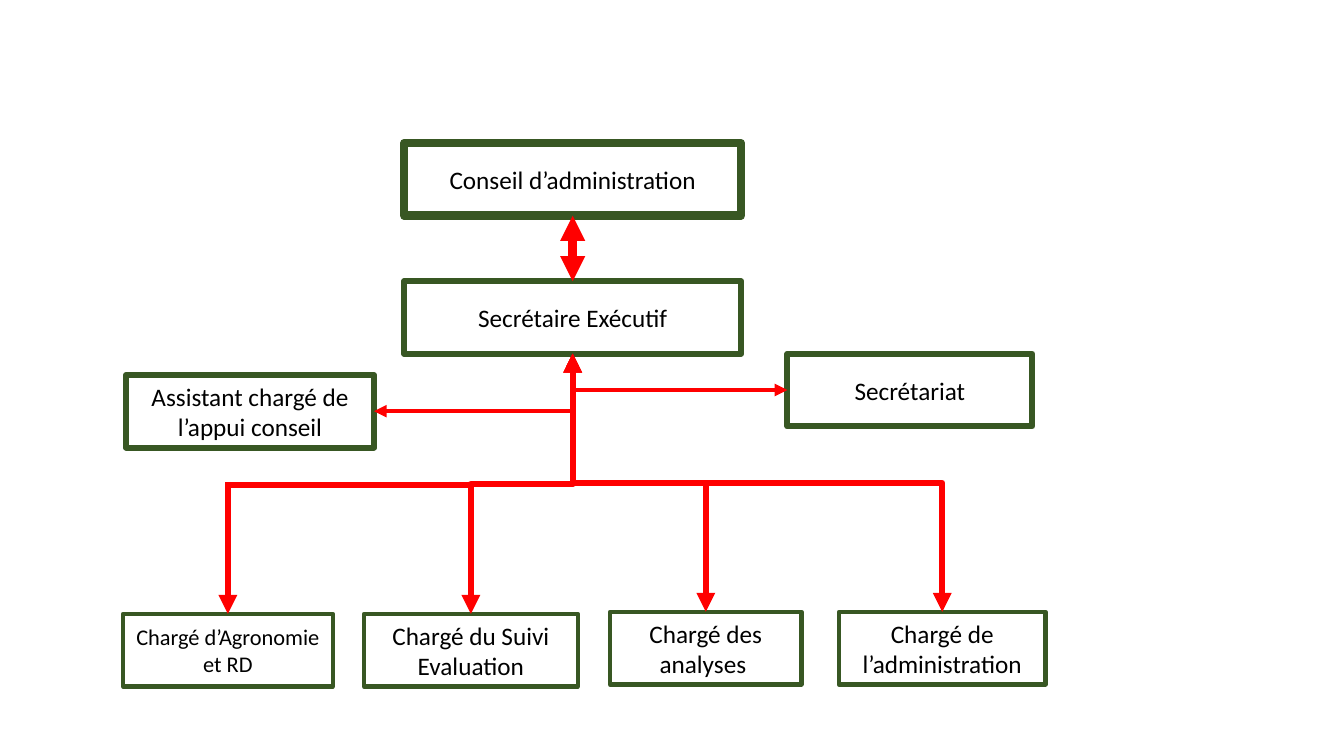
from lxml import etree
from pptx import Presentation
from pptx.dml.color import RGBColor
from pptx.enum.shapes import MSO_CONNECTOR, MSO_SHAPE
from pptx.enum.text import MSO_ANCHOR, PP_ALIGN
from pptx.oxml.ns import qn
from pptx.util import Inches, Pt

RECTANGLE = MSO_SHAPE.RECTANGLE
STRAIGHT, ELBOW = MSO_CONNECTOR.STRAIGHT, MSO_CONNECTOR.ELBOW
MIDDLE, CENTER = MSO_ANCHOR.MIDDLE, PP_ALIGN.CENTER
TOP, LEFT, BOTTOM, RIGHT = range(4)

WHITE = RGBColor(0xFF, 0xFF, 0xFF)
BLACK = RGBColor(0, 0, 0)
GREEN = RGBColor(0x38, 0x57, 0x23)
RED = RGBColor(0xFF, 0, 0)

BOX_HEIGHT = Inches(0.72)
QUARTER_TURN = 90 * 60000

presentation = Presentation()
presentation.slide_width = Inches(13.33)
presentation.slide_height = Inches(7.5)
slide = presentation.slides.add_slide(presentation.slide_layouts[6])


def add_box(text, left, top, width, border=3, size=18):
    box = slide.shapes.add_shape(
        RECTANGLE, Inches(left), Inches(top), Inches(width), BOX_HEIGHT)
    box.shadow.inherit = False
    box.fill.solid()
    box.fill.fore_color.rgb = WHITE
    box.line.color.rgb = GREEN
    box.line.width = Pt(border)
    box.text_frame.word_wrap = True
    box.text_frame.vertical_anchor = MIDDLE
    paragraph = box.text_frame.paragraphs[0]
    paragraph.alignment = CENTER
    run = paragraph.add_run()
    run.text = text
    run.font.name = "Calibri"
    run.font.size = Pt(size)
    run.font.color.rgb = BLACK
    return box


def add_link(kind, width, start=(0, 0), end=(0, 0), arrows=()):
    """Add a red connector; arrows names its headEnd and/or tailEnd."""
    link = slide.shapes.add_connector(kind, *map(Inches, start + end))
    link.line.color.rgb = RED
    link.line.width = Pt(width)
    properties = link._element.spPr
    for arrow in arrows:
        etree.SubElement(properties.find(qn("a:ln")), qn("a:" + arrow), type="triangle")
    etree.SubElement(properties, qn("a:effectLst"))
    return link


BOTH_ENDS = ("headEnd", "tailEnd")

# Management
board = add_box("Conseil d’administration", 4.01, 1.42, 3.34, border=6)
executive = add_box("Secrétaire Exécutif", 4.01, 2.79, 3.34, border=4.5)
secretariat = add_box("Secrétariat", 7.81, 3.51, 2.43, border=4.25)
assistant = add_box("Assistant chargé de l’appui conseil", 1.25, 3.72, 2.46, border=4.25)

# Officers
agronomy = add_box("Chargé d’Agronomie et RD", 1.22, 6.09, 2.08, size=16)
monitoring = add_box("Chargé du Suivi Evaluation", 3.61, 6.09, 2.12)
analyses = add_box("Chargé des analyses ", 6.05, 6.07, 1.9)
administration = add_box("Chargé de l’administration", 8.32, 6.07, 2.05)

# Vertical links: an elbow turned by 90 degrees leaves its box downwards
for upper, lower, width in (
    (board, executive, 6),
    (executive, administration, 4.5),
    (executive, analyses, 4.5),
    (executive, monitoring, 4.5),
):
    link = add_link(ELBOW, width, arrows=BOTH_ENDS)
    link.begin_connect(upper, BOTTOM)
    link.end_connect(lower, TOP)
    across, down = link.end_x - link.begin_x, link.end_y - link.begin_y
    middle_x = (link.begin_x + link.end_x) // 2
    middle_y = (link.begin_y + link.end_y) // 2
    link.width, link.height = down, abs(across)
    link.left, link.top = middle_x - down // 2, middle_y - abs(across) // 2
    transform = link._element.spPr.find(qn("a:xfrm"))
    transform.set("rot", str(QUARTER_TURN * (3 if across > 0 else 1)))
    transform.set("flipH", "1" if across > 0 else "0")

# Side links: a single bend up to the executive
for side_box, site in ((secretariat, LEFT), (assistant, RIGHT)):
    link = add_link(ELBOW, 3, arrows=BOTH_ENDS)
    link.begin_connect(side_box, site)
    link.end_connect(executive, BOTTOM)
    link._element.spPr.find(qn("a:prstGeom")).set("prst", "bentConnector2")

# Branch to agronomy
branch_x = 2.26
drop = add_link(STRAIGHT, 4.5, (branch_x, 4.78), (branch_x, 6.09), arrows=("tailEnd",))
drop.end_connect(agronomy, TOP)
add_link(STRAIGHT, 4.5, (branch_x, 4.81), (4.67, 4.81))

presentation.save("out.pptx")
